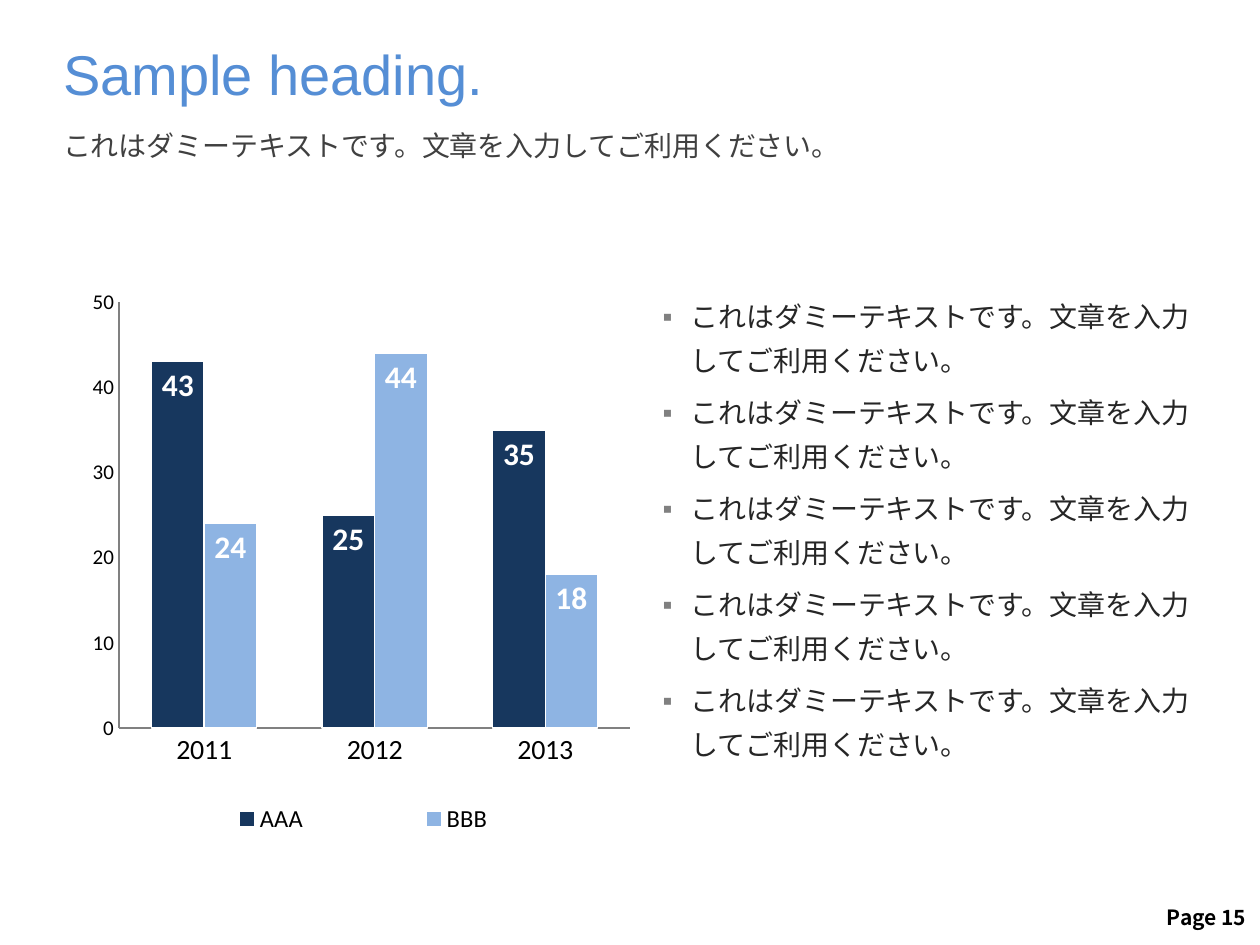
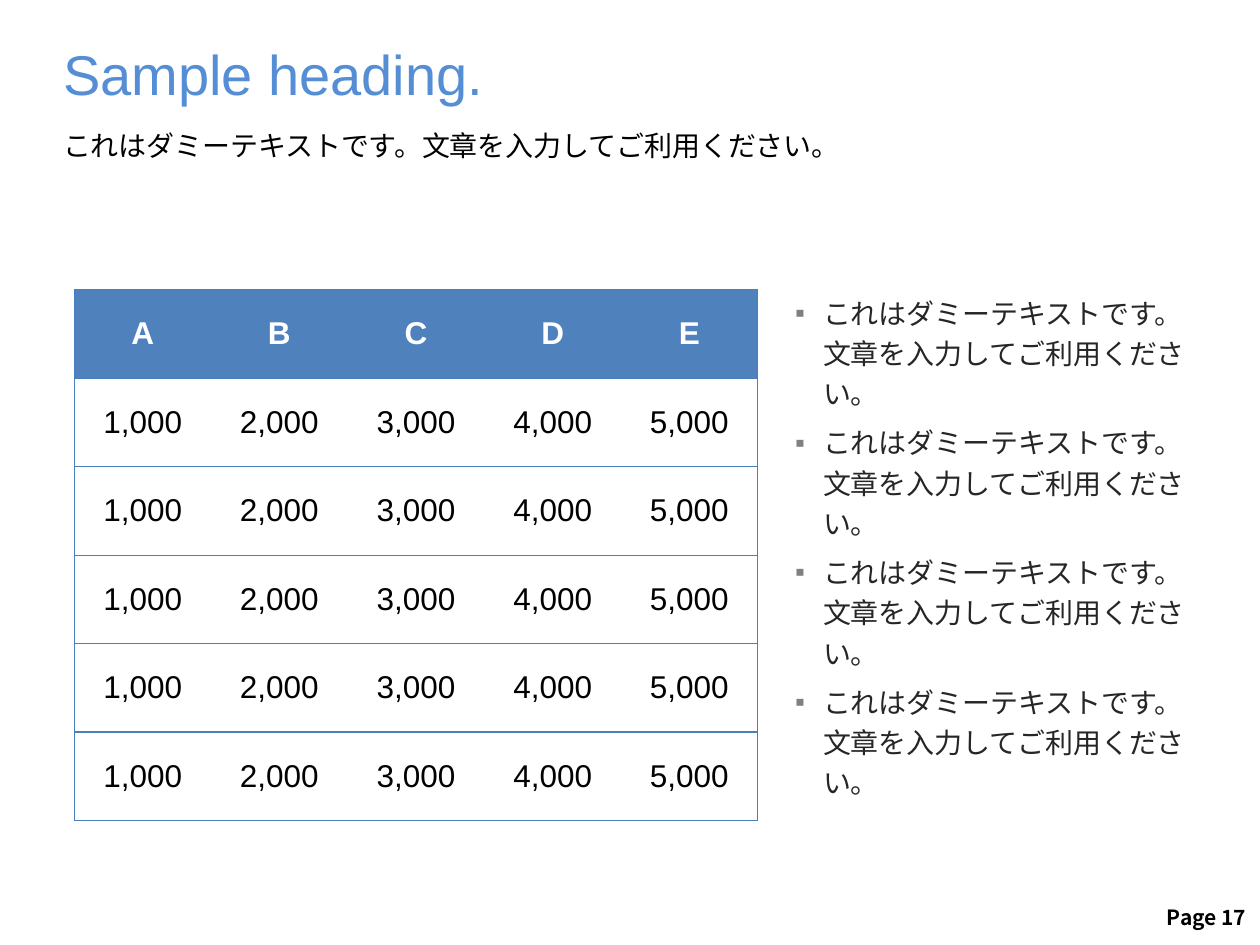
from copy import deepcopy

from lxml import etree
from pptx import Presentation
from pptx.chart.data import CategoryChartData
from pptx.dml.color import RGBColor
from pptx.enum import chart as ch, text as t
from pptx.oxml.ns import qn
from pptx.util import Pt

HEADING = "Sample heading."
DUMMY = "これはダミーテキストです。文章を入力してご利用ください。"
DUMMY_SPLIT = DUMMY.replace("。文", "。\v文")
YEARS = ["2011", "2012", "2013"]
SERIES = [("AAA", (43, 25, 35), "17375E"), ("BBB", (24, 44, 18), "8EB4E3")]
TABLE = [list("ABCDE")] + [["1,000", "2,000", "3,000", "4,000", "5,000"]] * 5

BLACK, WHITE, DARK, GREY = "000000", "FFFFFF", "262626", "808080"
HEADING_BLUE, HEADER_FILL, RULE = "558ED5", "4F81BD", "4B7EBC"
LEFT, CONTENT_LEFT, CONTENT_TOP = 36, 42.5, 165.6
BODY = dict(name="Calibri", size=16)
HEAD_MARGINS = (0, 3.6, 7.2, 3.6)


def rgb(value):
    return RGBColor.from_string(value)


def style_font(font, color, size, **values):
    font.color.rgb = rgb(color)
    for key, value in dict(values, size=Pt(size)).items():
        setattr(font, key, value)


def style_run(r, color, **values):
    style_font(r.font, color, **values)
    etree.SubElement(r.font._element, qn("a:ea"), typeface=values["name"])


def add_text(slide, box, paragraphs, color, margins=(7.2, 3.6, 7.2, 3.6), wrap=True, **font):
    """Add a text box with one style throughout; margins run left, top, right, bottom."""
    tf = slide.shapes.add_textbox(*map(Pt, box)).text_frame
    tf.word_wrap = wrap
    for side, margin in zip(("left", "top", "right", "bottom"), margins):
        setattr(tf, f"margin_{side}", Pt(margin))
    for i, content in enumerate(paragraphs):
        p = tf.add_paragraph() if i else tf.paragraphs[0]
        p.text = content
        for r in p.runs:
            style_run(r, color, **font)
        for br in p._p.findall(qn("a:br")):
            br.insert(0, deepcopy(p.runs[0].font._element))
    return tf


def add_bullets(slide, box, items, spacing):
    tf = add_text(slide, box, items, DARK, margins=(0, 0, 0, 0), **BODY)
    for i, p in enumerate(tf.paragraphs):
        pPr = p._p.get_or_add_pPr()
        pPr.set("marL", str(Pt(16)))
        pPr.set("indent", str(Pt(-16)))
        clr = etree.SubElement(pPr, qn("a:buClr"))
        etree.SubElement(clr, qn("a:srgbClr"), val=GREY)
        etree.SubElement(pPr, qn("a:buFont"), typeface="Arial")
        etree.SubElement(pPr, qn("a:buChar"), char="▪")
        p.line_spacing = spacing
        if i:
            p.space_before = Pt(5)


def start_slide(prs, page, width, intro_color):
    """Add a slide with its heading, introduction and page number."""
    slide = prs.slides.add_slide(prs.slide_layouts[6])
    footer = add_text(slide, (657.4, 513.4, 61.9, 21.6), [f"Page {page}"], BLACK,
                      wrap=False, name="Noto Sans CJK JP", size=12, bold=True)
    footer.vertical_anchor = t.MSO_ANCHOR.MIDDLE
    footer.paragraphs[0].alignment = t.PP_ALIGN.RIGHT
    add_text(slide, (LEFT, 69.8, width, 43.2), [DUMMY], intro_color, HEAD_MARGINS, **BODY)
    add_text(slide, (LEFT, 15.1, width, 63.4), [HEADING], HEADING_BLUE, (0, 7.2, 7.2, 3.6),
             name="Arial", size=32)
    return slide


def set_layout(parent, index, inner=False, **place):
    """Fix the place of a chart part, in fractions of the chart."""
    for old in parent.findall(qn("c:layout")):
        parent.remove(old)
    layout = etree.Element(qn("c:layout"))
    manual = etree.SubElement(layout, qn("c:manualLayout"))
    if inner:
        etree.SubElement(manual, qn("c:layoutTarget"), val="inner")
    for mode in ("xMode", "yMode"):
        etree.SubElement(manual, qn(f"c:{mode}"), val="edge")
    for key, value in place.items():
        etree.SubElement(manual, qn(f"c:{key}"), val=str(value))
    parent.insert(index, layout)


def add_column_chart(slide, box):
    data = CategoryChartData()
    data.categories = YEARS
    for name, values, _ in SERIES:
        data.add_series(name, values)
    chart = slide.shapes.add_chart(ch.XL_CHART_TYPE.COLUMN_CLUSTERED, *map(Pt, box), data).chart
    chart.has_title = False
    style_font(chart.font, BLACK, 18, name="Calibri")

    plot = chart.plots[0]
    plot.gap_width, plot.overlap, plot.vary_by_categories = 125, 0, False
    for series, (_, _, color) in zip(plot.series, SERIES):
        series.format.fill.solid()
        series.format.fill.fore_color.rgb = rgb(color)
        series.format.line.color.rgb = rgb(WHITE)
        series.format.line.width = Pt(0.75)
        labels = series.data_labels
        labels.show_value = True
        labels.position = ch.XL_LABEL_POSITION.INSIDE_END
        style_font(labels.font, WHITE, 18, name="Calibri", bold=True)

    for axis, size in ((chart.category_axis, 16), (chart.value_axis, 12)):
        axis.has_major_gridlines = False
        axis.major_tick_mark = axis.minor_tick_mark = ch.XL_TICK_MARK.NONE
        axis.format.line.color.rgb = rgb(GREY)
        style_font(axis.tick_labels.font, BLACK, size, name="Calibri")
    axis.minimum_scale, axis.maximum_scale, axis.major_unit = 0, 50, 10

    chart.has_legend = True
    legend = chart.legend
    legend.position = ch.XL_LEGEND_POSITION.BOTTOM
    legend.include_in_layout = False
    style_font(legend.font, BLACK, 14, name="Calibri")
    set_layout(legend._element, 1, x=0.09, y=0.91, w=0.86, h=0.09)
    set_layout(chart._chartSpace.chart.plotArea, 0, inner=True, x=0.08, y=0.02, w=0.92, h=0.77)


def set_borders(cell, sides):
    """Rule the named sides of a cell and clear the others."""
    tcPr = cell._tc.get_or_add_tcPr()
    for side in "LRTB":
        ln = etree.SubElement(tcPr, qn(f"a:ln{side}"), w=str(Pt(0.75)))
        if side in sides:
            fill = etree.SubElement(ln, qn("a:solidFill"))
            etree.SubElement(fill, qn("a:srgbClr"), val=RULE)
        else:
            etree.SubElement(ln, qn("a:noFill"))


def add_number_table(slide, box):
    rows, cols = len(TABLE), len(TABLE[0])
    table = slide.shapes.add_table(rows, cols, *map(Pt, box)).table
    table.horz_banding = False
    for i, values in enumerate(TABLE):
        for j, value in enumerate(values):
            cell = table.cell(i, j)
            set_borders(cell, "TB" + "L" * (j == 0) + "R" * (j == cols - 1))
            if i == 0:
                cell.fill.solid()
                cell.fill.fore_color.rgb = rgb(HEADER_FILL)
            else:
                cell.fill.background()
            cell.vertical_anchor = t.MSO_ANCHOR.MIDDLE
            p = cell.text_frame.paragraphs[0]
            p.alignment = t.PP_ALIGN.CENTER
            r = p.add_run()
            r.text = value
            style_run(r, BLACK if i else WHITE, name="Arial", size=18, bold=i == 0)


def main():
    prs = Presentation()
    prs.slide_width, prs.slide_height = Pt(720), Pt(540)

    slide = start_slide(prs, 15, 661, "404040")
    add_bullets(slide, (378.7, CONTENT_TOP, 304.6, 285), [DUMMY] * 5, 1.3)
    add_column_chart(slide, (CONTENT_LEFT, CONTENT_TOP, 318.2, 316.8))

    slide = start_slide(prs, 17, 653.8, BLACK)
    add_number_table(slide, (CONTENT_LEFT, CONTENT_TOP, 390.5, 303.3))
    add_bullets(slide, (454.3, CONTENT_TOP, 236.2, 316.8), [DUMMY_SPLIT] * 4, 1.2)

    prs.save("out.pptx")


if __name__ == "__main__":
    main()
